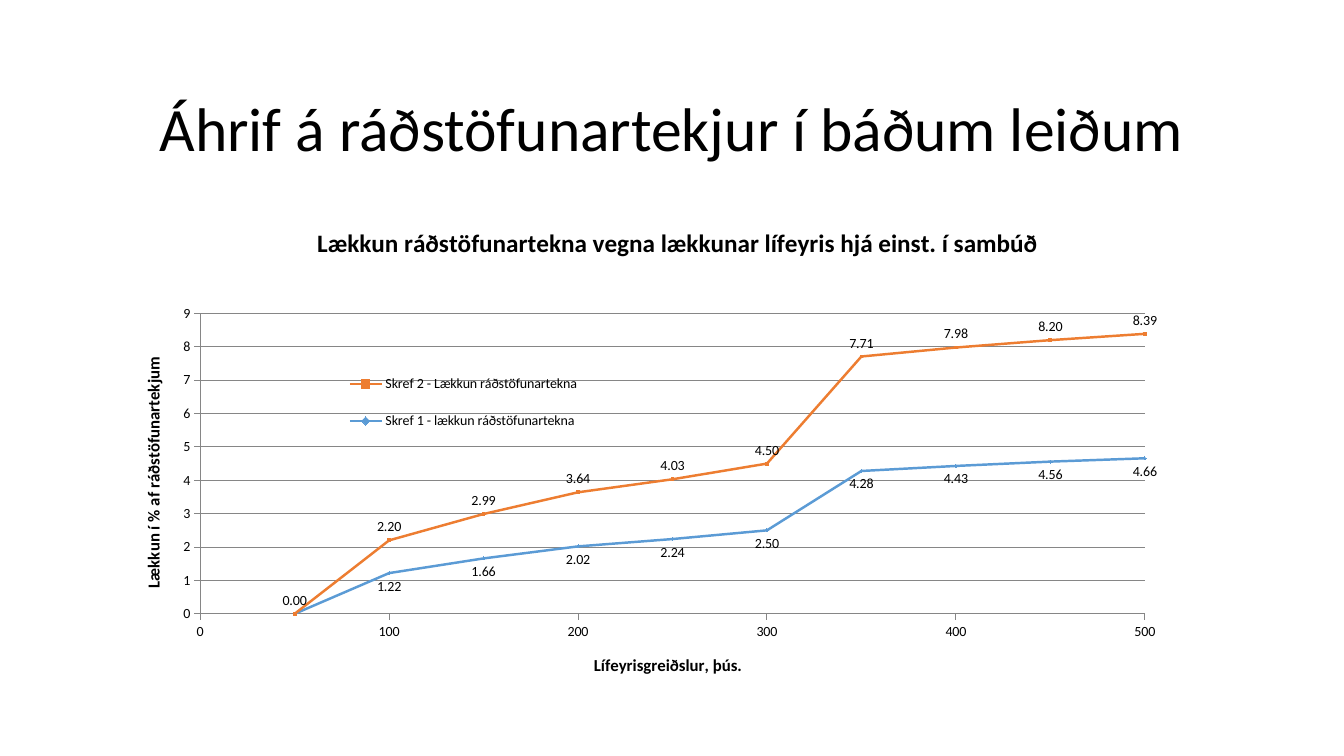
from dataclasses import dataclass

from lxml import etree
from pptx import Presentation
from pptx import util as u
from pptx.chart import data, datalabel
from pptx.dml import color
from pptx.enum import chart as ch
from pptx.enum import text
from pptx.oxml import ns


@dataclass(frozen=True)
class Theme:
    font: str = "Calibri"
    ink: str = "000000"
    grid: str = "868686"
    step_two: str = "ED7D31"
    step_one: str = "5B9BD5"
    heading: int = 44
    chart_title: int = 18
    axis_title: int = 12
    labels: int = 10


THEME = Theme()
PAYMENTS = range(50000, 500001, 50000)
# name, percentages, colour, marker, label side
STEPS = [
    ("Skref 2 - Lækkun ráðstöfunartekna",
     [0, 2.20, 2.99, 3.64, 4.03, 4.50, 7.71, 7.98, 8.20, 8.39],
     THEME.step_two, ch.XL_MARKER_STYLE.SQUARE, ch.XL_LABEL_POSITION.ABOVE),
    ("Skref 1 - lækkun ráðstöfunartekna",
     [0, 1.22, 1.66, 2.02, 2.24, 2.50, 4.28, 4.43, 4.56, 4.66],
     THEME.step_one, ch.XL_MARKER_STYLE.DIAMOND, ch.XL_LABEL_POSITION.BELOW),
]


def style(font, size, bold=False):
    font.name = THEME.font
    font.size = u.Pt(size)
    font.bold = bold
    font.color.rgb = color.RGBColor.from_string(THEME.ink)


def add_child(parent, tag, value):
    etree.SubElement(parent, ns.qn(f"c:{tag}")).set("val", str(value))


def place(element, index, **fractions):
    """Give a chart part a fixed place, as fractions of the chart."""
    for old in element.findall(ns.qn("c:layout")):
        element.remove(old)
    layout = etree.Element(ns.qn("c:layout"))
    manual = etree.SubElement(layout, ns.qn("c:manualLayout"))
    if index == 0:
        add_child(manual, "layoutTarget", "inner")
    add_child(manual, "xMode", "edge")
    add_child(manual, "yMode", "edge")
    for tag, value in fractions.items():
        add_child(manual, tag, value)
    element.insert(index, layout)


def add_title(owner, wording, size, x, y):
    """Title a chart or an axis."""
    title = owner.chart_title if hasattr(owner, "chart_title") else owner.axis_title
    title.text_frame.text = wording
    style(title.text_frame.paragraphs[0].runs[0].font, size, bold=True)
    place(title._element, 1, x=x, y=y)


def draw_heading(slide, left, top, width, height):
    frame = slide.shapes.add_textbox(left, top, width, height).text_frame
    frame.word_wrap = True
    frame.vertical_anchor = text.MSO_ANCHOR.MIDDLE
    frame.text = "Áhrif á ráðstöfunartekjur í báðum leiðum"
    line = frame.paragraphs[0]
    line.alignment = text.PP_ALIGN.CENTER
    line.line_spacing = 0.9
    style(line.runs[0].font, THEME.heading)


def style_axis(axis, maximum, step, number_format):
    axis.minimum_scale, axis.maximum_scale = 0, maximum
    axis.major_unit = step
    axis.major_tick_mark = ch.XL_TICK_MARK.OUTSIDE
    axis.minor_tick_mark = ch.XL_TICK_MARK.NONE
    axis.tick_labels.number_format = number_format
    axis.tick_labels.number_format_is_linked = False
    style(axis.tick_labels.font, THEME.labels)
    axis.format.line.color.rgb = color.RGBColor.from_string(THEME.grid)
    axis.format.line.width = u.Pt(0.75)


def style_step(series, hue, marker, side):
    rgb = color.RGBColor.from_string(hue)
    series.smooth = False
    series.format.line.color.rgb = rgb
    series.format.line.width = u.Pt(1.75)
    series.marker.style, series.marker.size = marker, 2
    series.marker.format.fill.solid()
    series.marker.format.fill.fore_color.rgb = rgb
    series.marker.format.line.color.rgb = rgb
    labels = datalabel.DataLabels(series._element.get_or_add_dLbls())
    labels.show_value = True
    labels.number_format = "0.00"
    labels.number_format_is_linked = False
    labels.position = side
    style(labels.font, THEME.labels)


def hide_first_label(series):
    hidden = etree.Element(ns.qn("c:dLbl"))
    add_child(hidden, "idx", 0)
    add_child(hidden, "delete", 1)
    series._element.get_or_add_dLbls().insert(0, hidden)


def draw_chart(slide, left, top, width, height):
    # Data
    cuts = data.XyChartData()
    for name, percentages, *_ in STEPS:
        step = cuts.add_series(name)
        for payment, percentage in zip(PAYMENTS, percentages):
            step.add_data_point(payment, percentage)
    chart = slide.shapes.add_chart(
        ch.XL_CHART_TYPE.XY_SCATTER_LINES, left, top, width, height, cuts).chart
    style(chart.font, THEME.labels)
    plot = chart.plots[0]
    plot.vary_by_categories = False

    # Titles
    add_title(chart, "Lækkun ráðstöfunartekna vegna lækkunar lífeyris hjá einst. í sambúð",
              THEME.chart_title, 0.19, 0.04)
    add_title(chart.category_axis, "Lífeyrisgreiðslur, þús.", THEME.axis_title, 0.43, 0.94)
    add_title(chart.value_axis, "Lækkun í % af ráðstöfunartekjum", THEME.axis_title, 0.04, 0.32)

    # Axes and grid
    style_axis(chart.category_axis, 500000, 100000, "#,##0,")
    style_axis(chart.value_axis, 9, 1, "0")
    chart.category_axis.has_major_gridlines = False
    grid = chart.value_axis.major_gridlines.format.line
    grid.color.rgb = color.RGBColor.from_string(THEME.grid)
    grid.width = u.Pt(0.75)

    # Lines
    for series, (_, _, *look) in zip(plot.series, STEPS):
        style_step(series, *look)
    hide_first_label(plot.series[1])

    # Legend and plot area
    chart.has_legend = True
    chart.legend.position = ch.XL_LEGEND_POSITION.RIGHT
    chart.legend.include_in_layout = False
    style(chart.legend.font, THEME.labels)
    place(chart.legend._element, 1, x=0.21, y=0.32, w=0.22, h=0.2)
    place(chart._chartSpace.chart.plotArea, 0, x=0.093, y=0.234, w=0.815, h=0.628)


def main():
    deck = Presentation()
    deck.slide_width, deck.slide_height = u.Pt(960), u.Pt(540)
    slide = deck.slides.add_slide(deck.slide_layouts[6])
    draw_heading(slide, u.Pt(66), u.Pt(42), u.Pt(828), u.Pt(104))
    draw_chart(slide, u.Pt(66), u.Pt(144), u.Pt(828), u.Pt(342.6))
    deck.save("out.pptx")


if __name__ == "__main__":
    main()
